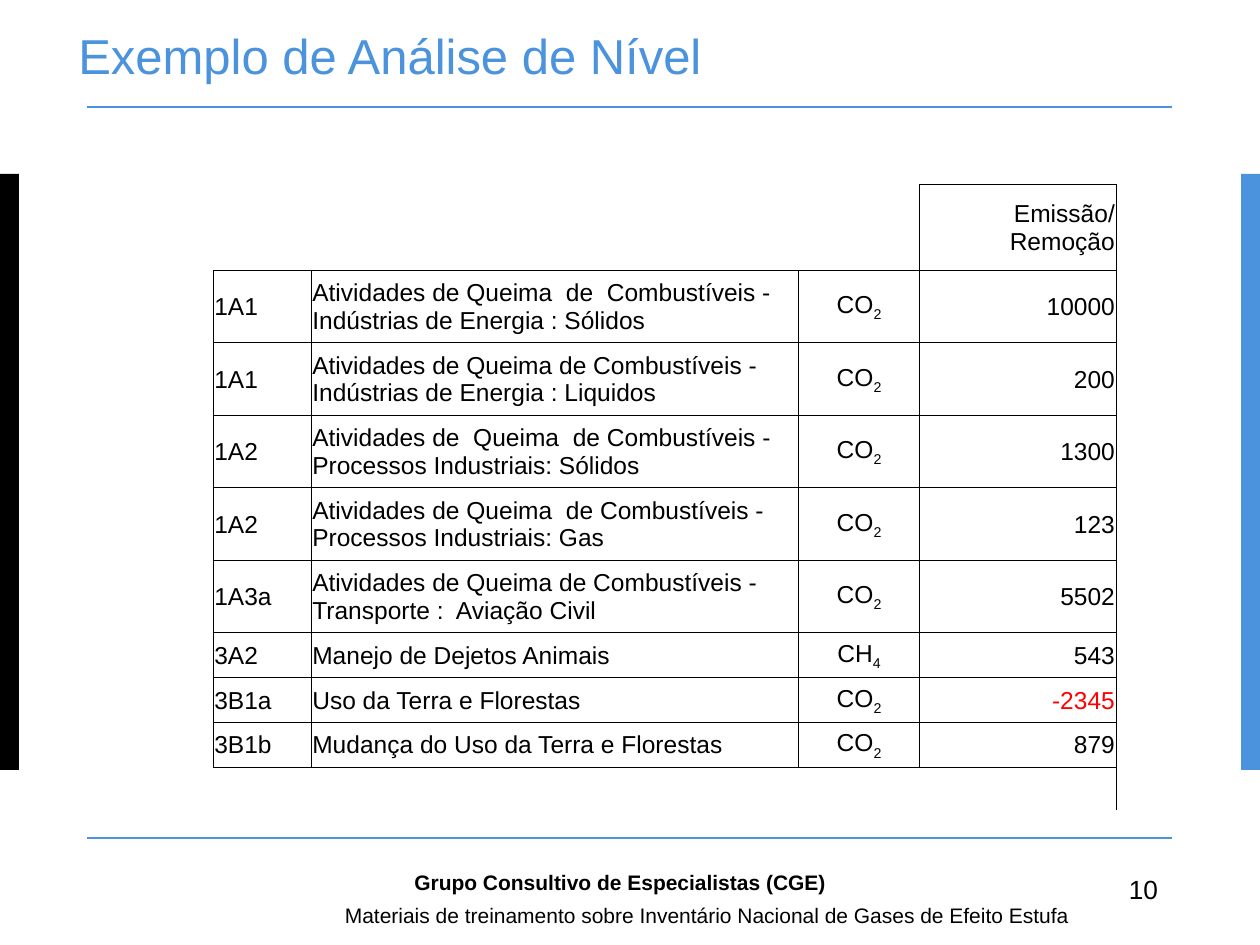
import pptx
import pptx.util
import pptx.dml.color
import pptx.enum.shapes
import pptx.enum.text
import lxml.etree
import pptx.oxml.ns

Pt = pptx.util.Pt
Align = pptx.enum.text.PP_ALIGN
Anchor = pptx.enum.text.MSO_ANCHOR

COLORS = {"ink": "000000", "blue": "4B93DC", "red": "FF0000"}
ROWS = [
    ("1A1", "Atividades de Queima  de  Combustíveis - Indústrias de Energia : Sólidos", "CO2", "10000"),
    ("1A1", "Atividades de Queima de Combustíveis - Indústrias de Energia : Liquidos", "CO2", "200"),
    ("1A2", "Atividades de  Queima  de Combustíveis - Processos Industriais: Sólidos", "CO2", "1300"),
    ("1A2", "Atividades de Queima  de Combustíveis - Processos Industriais: Gas", "CO2", "123"),
    ("1A3a", "Atividades de Queima de Combustíveis - Transporte :  Aviação Civil", "CO2", "5502"),
    ("3A2", "Manejo de Dejetos Animais", "CH4", "543"),
    ("3B1a", "Uso da Terra e Florestas", "CO2", "-2345"),
    ("3B1b", "Mudança do Uso da Terra e Florestas", "CO2", "879"),
]
WIDTHS = [56, 278.6, 69, 112.4]
HEIGHTS = [49] + [41.45] * 5 + [25.6] * 3 + [24.5]
ALIGNS = [Align.LEFT, Align.LEFT, Align.CENTER, Align.RIGHT]


class Deck:
    """Holds the style and the current slide."""

    def __init__(self, slide, face="Arial"):
        self.slide = slide
        self.face = face

    def color(self, name):
        return pptx.dml.color.RGBColor.from_string(COLORS[name])

    def style(self, run, size, color="ink", bold=False):
        run.font.name = self.face
        run.font.size = Pt(size)
        run.font.bold = bold
        run.font.color.rgb = self.color(color)

    def title(self, text, x, y, w, h):
        shape = self.slide.shapes.title
        shape.left, shape.top, shape.width, shape.height = Pt(x), Pt(y), Pt(w), Pt(h)
        frame = shape.text_frame
        frame.text = text
        frame.word_wrap = True
        frame.vertical_anchor = Anchor.MIDDLE
        frame.margin_left = frame.margin_right = frame.margin_top = frame.margin_bottom = 0
        para = frame.paragraphs[0]
        para.alignment = Align.LEFT
        para.line_spacing = Pt(15)
        self.style(para.runs[0], 28, "blue")

    def bar(self, x, y, w, h, color):
        shape = self.slide.shapes.add_shape(
            pptx.enum.shapes.MSO_SHAPE.RECTANGLE, Pt(x), Pt(y), Pt(w), Pt(h))
        shape.shadow.inherit = False
        shape.fill.solid()
        shape.fill.fore_color.rgb = self.color(color)
        shape.line.fill.background()

    def rule(self, x, y, end):
        line = self.slide.shapes.add_connector(
            pptx.enum.shapes.MSO_CONNECTOR.STRAIGHT, Pt(x), Pt(y), Pt(end), Pt(y))
        line.line.color.rgb = self.color("blue")
        line.line.width = Pt(1)
        lxml.etree.SubElement(line._element.spPr, pptx.oxml.ns.qn("a:effectLst"))

    def text(self, text, x, y, w, h, size, bold=False):
        frame = self.slide.shapes.add_textbox(Pt(x), Pt(y), Pt(w), Pt(h)).text_frame
        frame.text = text
        frame.word_wrap = True
        self.style(frame.paragraphs[0].runs[0], size, bold=bold)

    def edge(self, cell, sides):
        props = cell._tc.get_or_add_tcPr()
        name = pptx.oxml.ns.qn
        for side in "LRTB":
            line = lxml.etree.SubElement(props, name("a:ln" + side), w=str(Pt(0.5)))
            if side in sides:
                fill = lxml.etree.SubElement(line, name("a:solidFill"))
                lxml.etree.SubElement(fill, name("a:srgbClr"), val=COLORS["ink"])
            else:
                lxml.etree.SubElement(line, name("a:noFill"))

    def cell(self, cell, text, align, sides):
        self.edge(cell, sides)
        cell.fill.background()
        cell.vertical_anchor = Anchor.MIDDLE
        cell.margin_left = cell.margin_right = cell.margin_top = Pt(0.7)
        cell.margin_bottom = 0
        para = cell.text_frame.paragraphs[0]
        para.alignment = align
        parts = [text[:-1], text[-1]] if align == Align.CENTER and text else [text]
        for index, part in enumerate(parts):
            if part:
                run = para.add_run()
                run.text = part
                self.style(run, 14, "red" if part.startswith("-") else "ink")
                if index:
                    run.font._element.set("baseline", "-25000")

    def table(self, rows, x, y):
        grid = self.slide.shapes.add_table(
            len(rows), len(WIDTHS), Pt(x), Pt(y), Pt(sum(WIDTHS)), Pt(sum(HEIGHTS))).table
        grid.first_row = grid.horz_banding = False
        for col, width in zip(grid.columns, WIDTHS):
            col.width = Pt(width)
        last = len(rows) - 1
        for r, row in enumerate(rows):
            grid.rows[r].height = Pt(HEIGHTS[r])
            for c, text in enumerate(row):
                sides = "LRTB"
                if r == 0 and c < 3:
                    sides = "BR" if c == 2 else "B"
                elif r == last:
                    sides = "TR" if c == 3 else "T"
                self.cell(grid.cell(r, c), text, ALIGNS[c], sides)


def main():
    show = pptx.Presentation()
    show.slide_width, show.slide_height = Pt(720), Pt(540)
    deck = Deck(show.slides.add_slide(show.slide_layouts[5]))
    deck.bar(0, 99.4, 10.8, 340.6, "ink")
    deck.bar(709.2, 99.4, 10.8, 340.6, "blue")
    for y in (61.2, 478.8):
        deck.rule(49.7, y, 669.6)
    deck.title("Exemplo de Análise de Nível", 44.8, 20.9, 623.5, 39.6)
    deck.table([("", "", "", "Emissão/ Remoção")] + ROWS + [("",) * 4], 121.8, 105.4)
    deck.text("10", 638, 495.4, 33.8, 25.2, 15)
    deck.text("Materiais de treinamento sobre Inventário Nacional de Gases de Efeito Estufa",
              190, 512, 429, 14.4, 12)
    deck.text("Grupo Consultivo de Especialistas (CGE)", 229.7, 493.2, 272, 19.4, 12, True)
    show.save("out.pptx")


if __name__ == "__main__":
    main()
